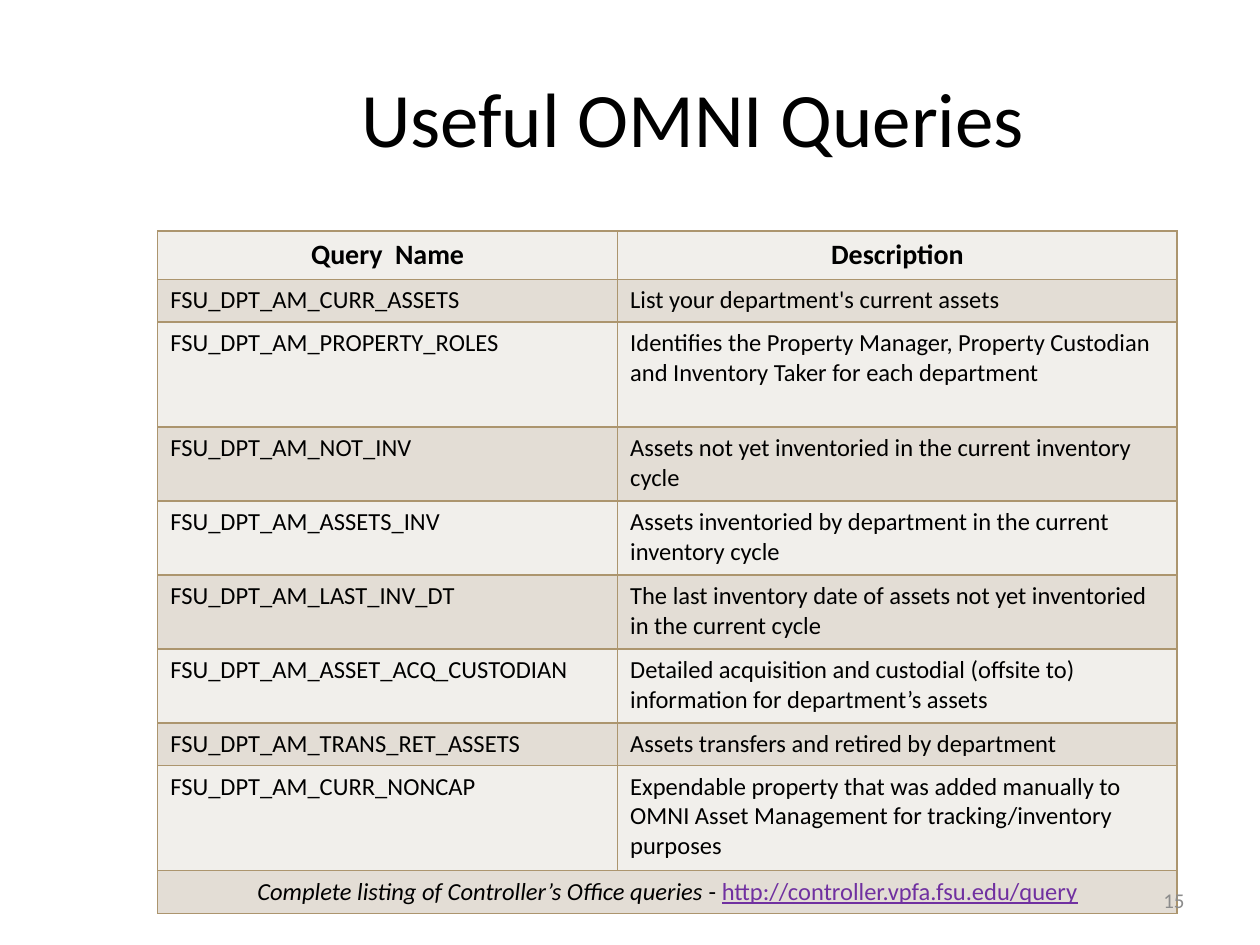
from lxml.etree import SubElement
from pptx import Presentation
from pptx.dml.color import RGBColor
from pptx.enum.shapes import MSO_SHAPE as Shape
from pptx.enum.text import MSO_ANCHOR as Anchor, PP_ALIGN as Align
from pptx.oxml.ns import qn
from pptx.util import Cm, Pt

COLORS = {
    "white": "FFFFFF",
    "black": "000000",
    "light": "F1EFEB",
    "dark": "E3DDD5",
    "border": "AC956E",
    "link": "7030A0",
    "number": "8C8C8C",
}
FONT = "Calibri"
LINE_HEIGHT = 0.63
ROW_PADDING = 0.23
HEADER_HEIGHT = 0.97

QUERIES = [
    ("FSU_DPT_AM_CURR_ASSETS", "List your department's current assets", 1),
    ("FSU_DPT_AM_PROPERTY_ROLES",
     "Identifies the Property Manager, Property Custodian and Inventory Taker for each department", 3),
    ("FSU_DPT_AM_NOT_INV", "Assets not yet inventoried in the current inventory cycle", 2),
    ("FSU_DPT_AM_ASSETS_INV", "Assets inventoried by department in the current inventory cycle", 2),
    ("FSU_DPT_AM_LAST_INV_DT",
     "The last inventory date of assets not yet inventoried in the current cycle", 2),
    ("FSU_DPT_AM_ASSET_ACQ_CUSTODIAN",
     "Detailed acquisition and custodial (offsite to) information for department’s assets", 2),
    ("FSU_DPT_AM_TRANS_RET_ASSETS", "Assets transfers and retired by department", 1),
    ("FSU_DPT_AM_CURR_NONCAP",
     "Expendable property that was added manually to OMNI Asset Management for tracking/inventory purposes", 3),
]


def color(name):
    """Return the named colour."""
    return RGBColor.from_string(COLORS[name])


def write(para, text, size=14, tint="black", bold=False, italic=False, underline=False, align=Align.LEFT):
    """Add a formatted span of text to a paragraph."""
    para.alignment = align
    span = para.add_run()
    span.text = text
    font = span.font
    font.name, font.size = FONT, Pt(size)
    font.bold, font.italic, font.underline = bold, italic, underline
    font.color.rgb = color(tint)


class QueryPage:
    """Hold the style and the current slide."""

    def __init__(self, deck):
        """Add a blank slide to the deck."""
        self.page = deck.slides.add_slide(deck.slide_layouts[6])

    def title(self, text, left, top, width, height):
        """Add the rounded title box."""
        box = self.page.shapes.add_shape(
            Shape.ROUNDED_RECTANGLE, Cm(left), Cm(top), Cm(width), Cm(height))
        box.shadow.inherit = False
        box.fill.solid()
        box.fill.fore_color.rgb = color("white")
        box.line.fill.background()
        box.text_frame.word_wrap = True
        box.text_frame.vertical_anchor = Anchor.MIDDLE
        write(box.text_frame.paragraphs[0], text, size=44, align=Align.CENTER)

    def number(self, text, left, top, width, height):
        """Add the slide number."""
        box = self.page.shapes.add_textbox(Cm(left), Cm(top), Cm(width), Cm(height))
        box.text_frame.word_wrap = True
        box.text_frame.vertical_anchor = Anchor.MIDDLE
        write(box.text_frame.paragraphs[0], text, size=12, tint="number", align=Align.RIGHT)

    def cell_style(self, cell, fill):
        """Give a cell its borders and fill."""
        properties = cell._tc.get_or_add_tcPr()
        for side in ("lnL", "lnR", "lnT", "lnB"):
            line = SubElement(properties, qn(f"a:{side}"), w=str(Pt(1)))
            solid = SubElement(line, qn("a:solidFill"))
            SubElement(solid, qn("a:srgbClr"), val=COLORS["border"])
        cell.fill.solid()
        cell.fill.fore_color.rgb = color(fill)

    def table(self, left, top, widths, headings, queries, footer):
        """Add the query table with its merged footer row."""
        heights = [HEADER_HEIGHT]
        heights += [ROW_PADDING + LINE_HEIGHT * lines for *_, lines in queries]
        heights.append(ROW_PADDING + LINE_HEIGHT)
        table = self.page.shapes.add_table(
            len(heights), len(widths), Cm(left), Cm(top), Cm(sum(widths)), Cm(sum(heights))).table
        table.first_row = table.horz_banding = False
        for column, width in zip(table.columns, widths):
            column.width = Cm(width)
        for index, (row, height) in enumerate(zip(table.rows, heights)):
            row.height = Cm(height)
            for cell in row.cells:
                self.cell_style(cell, "dark" if index % 2 else "light")
        for cell, heading in zip(table.rows[0].cells, headings):
            write(cell.text_frame.paragraphs[0], heading, size=16, bold=True, align=Align.CENTER)
        for index, (name, description, _) in enumerate(queries, 1):
            for cell, text in zip(table.rows[index].cells, (name, description)):
                write(cell.text_frame.paragraphs[0], text)
        last = len(heights) - 1
        table.cell(last, 0).merge(table.cell(last, len(widths) - 1))
        para = table.cell(last, 0).text_frame.paragraphs[0]
        for text, style in footer:
            write(para, text, align=Align.CENTER, **style)


def main():
    """Build and save the deck."""
    deck = Presentation()
    deck.slide_width, deck.slide_height = Cm(25.4), Cm(19.05)
    page = QueryPage(deck)
    page.title("Useful OMNI Queries", 3.6, 0.76, 20.75, 3.18)
    page.table(3.18, 4.66, (9.27, 11.28), ("Query  Name", "Description"), QUERIES, [
        ("Complete listing of Controller’s Office queries ", {"italic": True}),
        ("- ", {}),
        ("http://controller.vpfa.fsu.edu/query", {"tint": "link", "underline": True}),
    ])
    page.number("15", 18.2, 17.65, 5.93, 1.01)
    deck.save("out.pptx")


if __name__ == "__main__":
    main()
